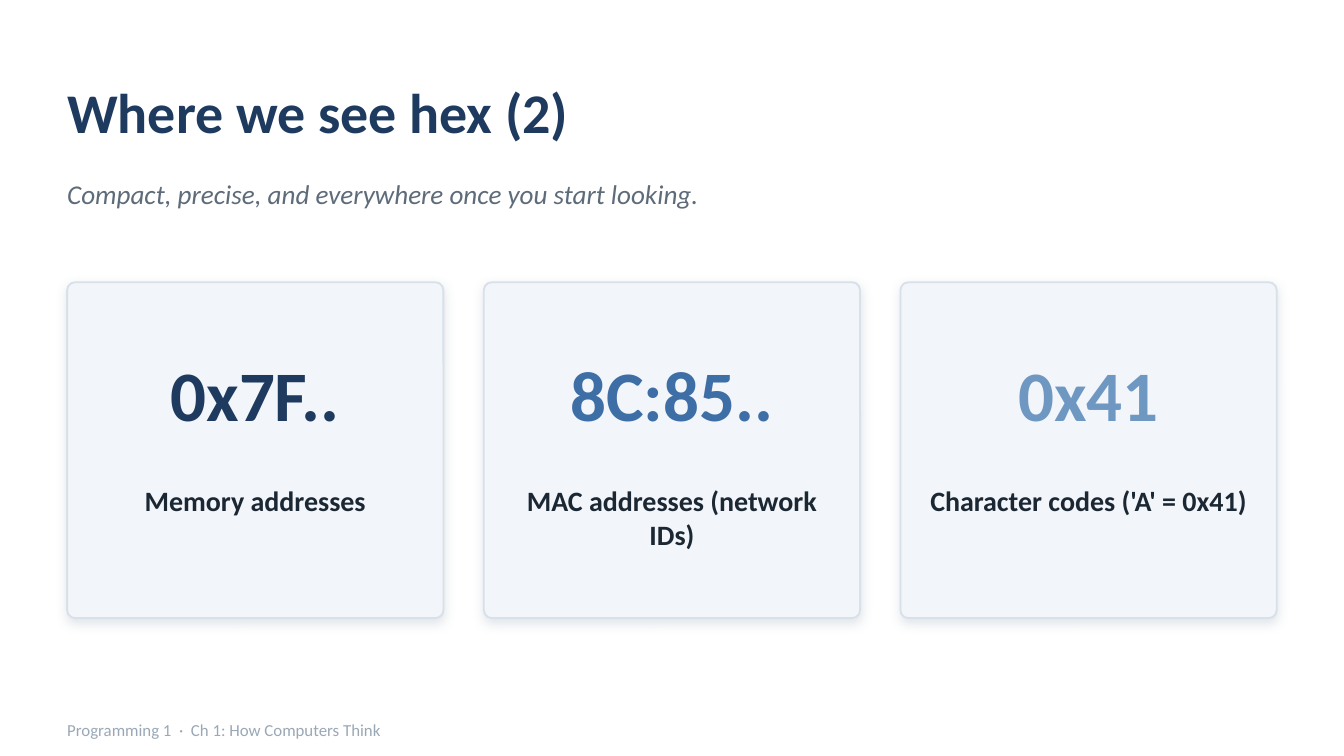
"""Build the slide that shows three everyday uses of hexadecimal."""
from dataclasses import dataclass

from lxml import etree
from pptx import Presentation
from pptx.dml.color import RGBColor
from pptx.enum.shapes import MSO_SHAPE
from pptx.enum.text import MSO_ANCHOR, MSO_AUTO_SIZE, PP_ALIGN
from pptx.oxml.ns import qn
from pptx.util import Inches, Pt

ROUNDED = MSO_SHAPE.ROUNDED_RECTANGLE
TOP, MIDDLE = MSO_ANCHOR.TOP, MSO_ANCHOR.MIDDLE
LEFT, CENTER = PP_ALIGN.LEFT, PP_ALIGN.CENTER
NO_FIT = MSO_AUTO_SIZE.NONE
TITLE_ONLY = 5
GRID = 0.1


@dataclass(frozen=True)
class Theme:
    """Colours and type sizes of the slide."""
    font: str = "Calibri"
    background: str = "FFFFFF"
    navy: str = "1F3A5F"
    blue: str = "3D6EA5"
    sky: str = "6E97C2"
    ink: str = "1B2733"
    muted: str = "5E6B79"
    pale: str = "9AA8B6"
    panel: str = "F2F5F9"
    border: str = "D8E0E9"
    title_size: float = 30
    subtitle_size: float = 14.5
    value_size: float = 38
    label_size: float = 15
    footer_size: float = 9


def cells(*counts):
    """Turn counts of grid cells into lengths."""
    return [Inches(round(count * GRID, 3)) for count in counts]


def write_text(box, text, *, font, size, color, bold=False, italic=False,
               align=LEFT, anchor=MIDDLE):
    """Fill a box with one formatted paragraph and no insets."""
    frame = box.text_frame
    frame.word_wrap = True
    frame.auto_size = NO_FIT
    frame.vertical_anchor = anchor
    frame.margin_left = frame.margin_right = 0
    frame.margin_top = frame.margin_bottom = 0
    para = frame.paragraphs[0]
    para.alignment = align
    span = para.add_run()
    span.text = text
    span.font.name = font
    span.font.size = Pt(size)
    span.font.bold = bold
    span.font.italic = italic
    span.font.color.rgb = RGBColor.from_string(color)


def add_soft_shadow(shape, color):
    """Give a shape a faint shadow that falls straight down."""
    shape.shadow.inherit = False
    effects = shape._element.spPr.find(qn("a:effectLst"))
    shadow = etree.SubElement(effects, qn("a:outerShdw"), blurRad=str(Pt(6)),
                              dist=str(Pt(2)), dir="5400000",
                              algn="bl", rotWithShape="0")
    tint = etree.SubElement(shadow, qn("a:srgbClr"), val=color)
    etree.SubElement(tint, qn("a:alpha"), val="28000")


class SlideBuilder:
    """Hold the theme and the current slide."""

    def __init__(self, page, theme):
        """Start on a page with a plain background."""
        self.page = page
        self.theme = theme
        fill = page.background.fill
        fill.solid()
        fill.fore_color.rgb = RGBColor.from_string(theme.background)

    def title(self, text, area):
        """Move and fill the title placeholder."""
        box = self.page.shapes.title
        box.left, box.top, box.width, box.height = cells(*area)
        write_text(box, text, font=self.theme.font, size=self.theme.title_size,
                   color=self.theme.navy, bold=True)

    def text(self, text, area, **style):
        """Add a text box."""
        box = self.page.shapes.add_textbox(*cells(*area))
        write_text(box, text, font=self.theme.font, **style)

    def panel(self, area):
        """Add a rounded panel with a border and a shadow."""
        shape = self.page.shapes.add_shape(ROUNDED, *cells(*area))
        shape.adjustments[0] = 0.024
        shape.fill.solid()
        shape.fill.fore_color.rgb = RGBColor.from_string(self.theme.panel)
        shape.line.color.rgb = RGBColor.from_string(self.theme.border)
        shape.line.width = Pt(1)
        add_soft_shadow(shape, self.theme.pale)

    def card(self, left, value, label, color):
        """Add a panel with a large value above its label."""
        theme = self.theme
        self.panel((left, 21, 28, 25))
        self.text(value, (left + 1, 24.5, 26, 9.5), size=theme.value_size,
                  color=color, bold=True, align=CENTER)
        self.text(label, (left + 1.5, 36, 25, 8), size=theme.label_size,
                  color=theme.ink, bold=True, align=CENTER, anchor=TOP)


def main():
    """Build and save the deck."""
    theme = Theme()
    deck = Presentation()
    deck.slide_width, deck.slide_height = Inches(10), Inches(5.625)
    page = deck.slides.add_slide(deck.slide_layouts[TITLE_ONLY])
    slide = SlideBuilder(page, theme)

    slide.title("Where we see hex (2)", (5, 4, 90, 8.5))
    slide.text("Compact, precise, and everywhere once you start looking.",
               (5, 12.4, 90, 4), size=theme.subtitle_size,
               color=theme.muted, italic=True)
    cards = [
        ("0x7F..", "Memory addresses", theme.navy),
        ("8C:85..", "MAC addresses (network IDs)", theme.blue),
        ("0x41", "Character codes ('A' = 0x41)", theme.sky),
    ]
    for column, (value, label, color) in enumerate(cards):
        slide.card(5 + 31 * column, value, label, color)
    slide.text("Programming 1  ·  Ch 1: How Computers Think",
               (5, 53, 80, 2.6), size=theme.footer_size, color=theme.pale)
    deck.save("out.pptx")


if __name__ == "__main__":
    main()
